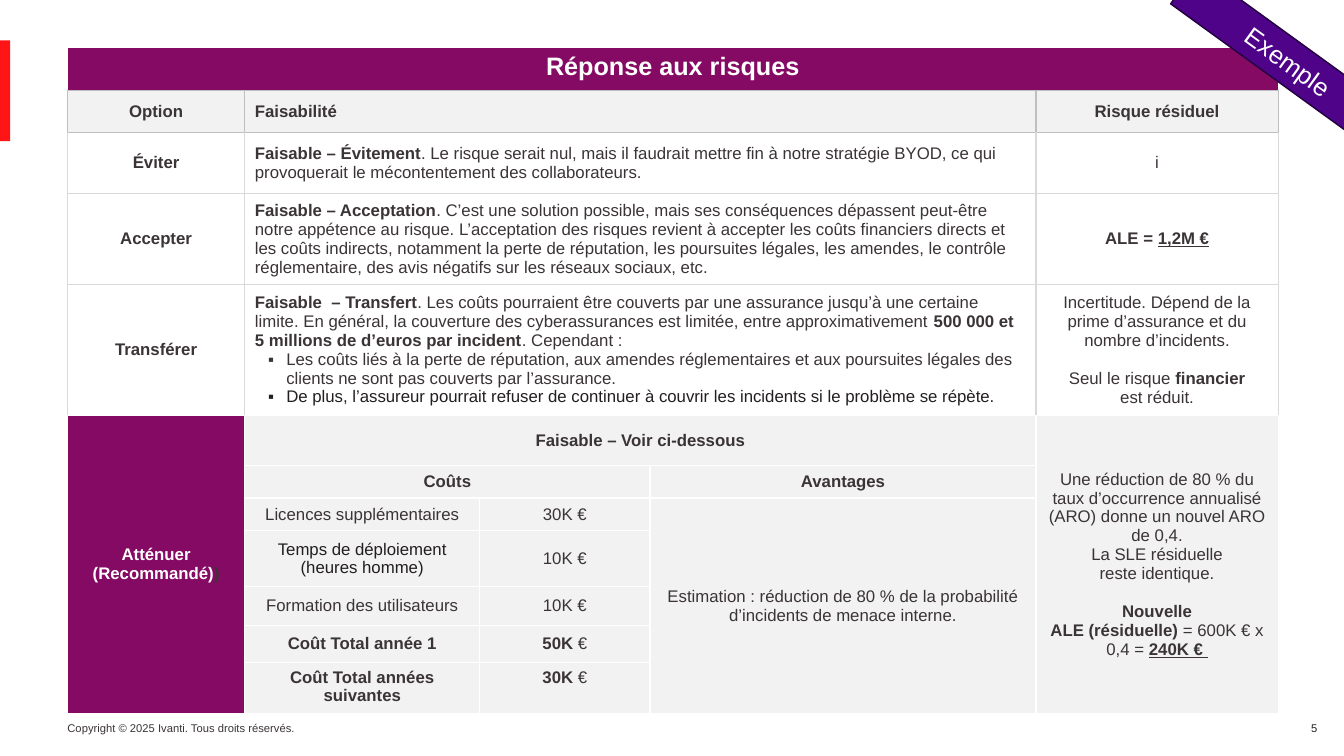
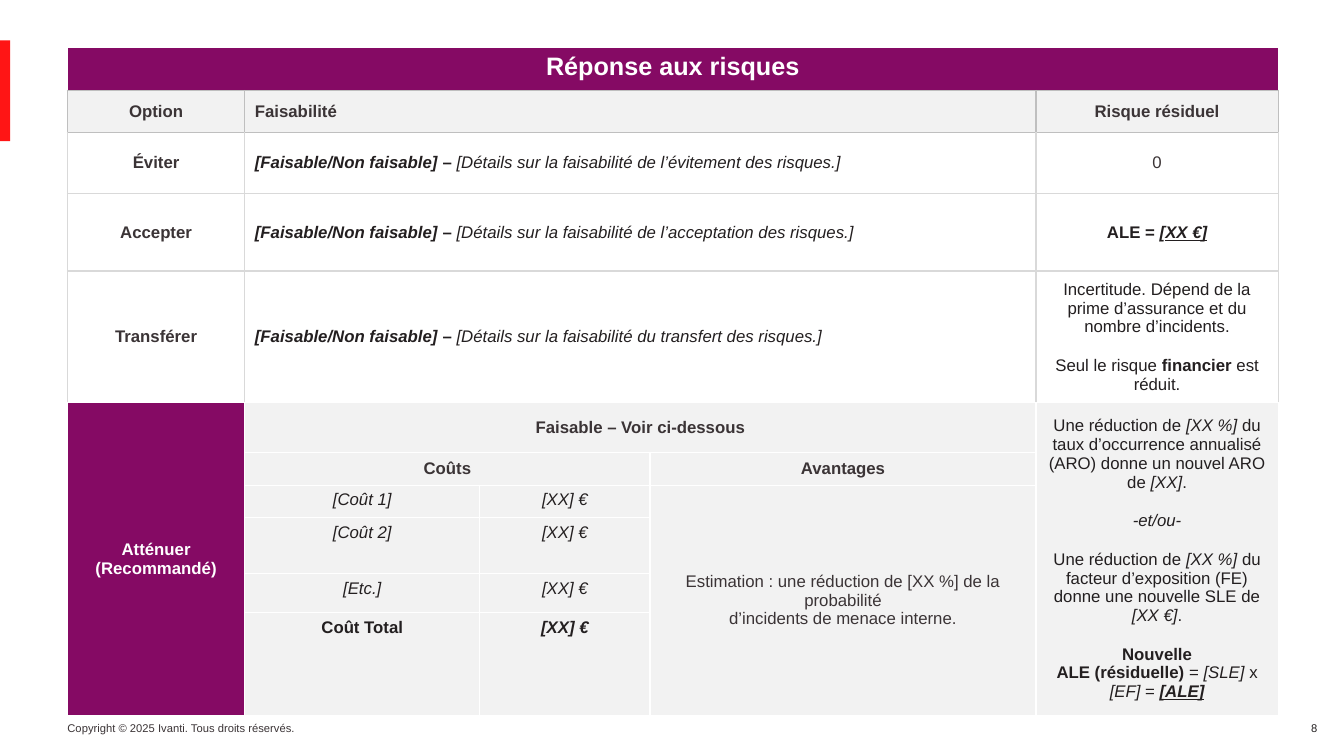
"""Build the two risk response slides: a worked example and its blank template."""
from dataclasses import dataclass

import lxml.etree
import pptx
import pptx.dml.color
import pptx.enum.shapes
import pptx.enum.text
import pptx.oxml
import pptx.oxml.ns
import pptx.util

Cm, Pt = pptx.util.Cm, pptx.util.Pt
rgb = pptx.dml.color.RGBColor.from_string
ALIGN, ANCHOR = pptx.enum.text.PP_ALIGN, pptx.enum.text.MSO_ANCHOR
RECTANGLE = pptx.enum.shapes.MSO_SHAPE.RECTANGLE
qn = pptx.oxml.ns.qn


@dataclass(frozen=True)
class Theme:
    font: str = "Arial"
    text: str = "3B3436"
    dark: str = "231F20"
    white: str = "FFFFFF"
    purple: str = "850A64"
    red: str = "FF1515"
    ribbon: str = "4E0389"
    ribbon_edge: str = "22013C"
    panel: str = "F2F2F2"
    rule: str = "BFBFBF"
    pale_rule: str = "D9D9D9"
    heading: int = 18
    body: int = 12
    footer: int = 8


theme = Theme()


@dataclass
class Para:
    runs: list
    color: str = theme.text
    gap: bool = False
    bullet: bool = False


def write(frame, paras, align, size):
    for index, para in enumerate(paras):
        line = frame.paragraphs[0] if index == 0 else frame.add_paragraph()
        line.alignment = align
        if para.gap:
            line.space_before = Pt(14)
        if para.bullet:
            props = line._p.get_or_add_pPr()
            props.set("marL", str(Cm(0.79)))
            props.set("indent", str(-Cm(0.46)))
            lxml.etree.SubElement(props, qn("a:buFont"), typeface=theme.font)
            lxml.etree.SubElement(props, qn("a:buChar"), char="▪")
        line.font.name, line.font.size = theme.font, Pt(size)
        line.font.color.rgb = rgb(para.color)
        for words, style in para.runs:
            for number, piece in enumerate(words.split("\n")):
                if number:
                    line.add_line_break()
                run = line.add_run()
                run.text = piece
                target = line.font if len(para.runs) == 1 else run.font
                target.bold = "b" in style
                target.italic = "i" in style
                target.underline = "u" in style
                if "t" in style:
                    run.font.color.rgb = rgb(theme.text)


def paint(shape, fill, edge=None):
    shape.shadow.inherit = False
    shape.fill.solid()
    shape.fill.fore_color.rgb = rgb(fill)
    if edge:
        shape.line.color.rgb = rgb(edge)
        shape.line.width = Pt(1)
    else:
        shape.line.fill.background()


shared_labels = {
    (1, 0): "Option",
    (1, 1): "Faisabilité",
    (1, 4): "Risque résiduel",
    (2, 0): "Éviter",
    (3, 0): "Accepter",
    (4, 0): "Transférer",
    (5, 1): "Faisable – Voir ci-dessous",
    (6, 1): "Coûts",
    (6, 3): "Avantages",
}
shared_cells = {place: [Para([(label, "b")])] for place, label in shared_labels.items()}
shared_cells[0, 0] = [Para([("Réponse aux risques", "b")], theme.white)]

example_cells = {
    (2, 1): [Para([
        ("Faisable – Évitement", "b"),
        (". Le risque serait nul, mais il faudrait mettre fin à notre stratégie BYOD, ce qui "
         "provoquerait le mécontentement des collaborateurs.", ""),
    ])],
    (2, 4): [Para([("i", "")])],
    (3, 1): [Para([
        ("Faisable – Acceptation", "b"),
        (". C’est une solution possible, mais ses conséquences dépassent peut-être notre appétence "
         "au risque. L’acceptation des risques revient à accepter les coûts financiers directs et "
         "les coûts indirects, notamment la perte de réputation, les poursuites légales, les "
         "amendes, le contrôle réglementaire, des avis négatifs sur les réseaux sociaux, etc.", ""),
    ])],
    (3, 4): [Para([("ALE = ", "b"), ("1,2M €", "bu")])],
    (4, 1): [
        Para([
            ("Faisable  – Transfert", "b"),
            (". Les coûts pourraient être couverts par une assurance jusqu’à une certaine limite. "
             "En général, la couverture des cyberassurances est limitée, entre "
             "approximativement ", ""),
            ("500 000 et 5 millions de d’euros par incident", "b"),
            (". Cependant :", ""),
        ]),
        Para([("Les coûts liés à la perte de réputation, aux amendes réglementaires et aux "
               "poursuites légales des clients ne sont pas couverts par l’assurance.", "")],
             bullet=True),
        Para([("De plus, l’assureur pourrait refuser de continuer à couvrir les incidents si le "
               "problème se répète.", "")], theme.dark, bullet=True),
    ],
    (4, 4): [
        Para([("Incertitude. Dépend de la prime d’assurance et du nombre d’incidents.", "")]),
        Para([("Seul le risque ", ""), ("financier", "b")], gap=True),
        Para([("est réduit.", "")]),
    ],
    (5, 0): [Para([("Atténuer (Recommandé)", "b"), (")", "bt")], theme.white)],
    (5, 4): [
        Para([("Une réduction de 80 % du taux d’occurrence annualisé (ARO) donne un nouvel ARO "
               "de 0,4.", "")]),
        Para([("La SLE résiduelle\nreste identique.", "")]),
        Para([("Nouvelle\nALE (résiduelle)", "b"), (" = 600K € x 0,4 = ", ""), ("240K € ", "bu")],
             gap=True),
    ],
    (7, 1): [Para([("Licences supplémentaires", "")])],
    (7, 2): [Para([("30K €", "")])],
    (7, 3): [Para([("Estimation : réduction de 80 % de la probabilité\n"
                    "d’incidents de menace interne.", "")])],
    (8, 1): [Para([("Temps de déploiement (heures homme)", "")], theme.dark)],
    (8, 2): [Para([("10K €", "")])],
    (9, 1): [Para([("Formation des utilisateurs", "")])],
    (9, 2): [Para([("10K €", "")])],
    (10, 1): [Para([("Coût Total année 1", "b")])],
    (10, 2): [Para([("50K ", "b"), ("€", "")])],
    (11, 1): [Para([("Coût Total années suivantes", "b")])],
    (11, 2): [Para([("30K ", "b"), ("€", "")])],
}

template_cells = {
    (2, 4): [Para([("0", "")])],
    (3, 4): [Para([("ALE = ", "b"), ("[", "bi"), ("XX €]", "biu")], theme.dark)],
    (4, 4): [
        Para([("Incertitude. Dépend de la prime d’assurance et du nombre d’incidents.", "")],
             theme.dark),
        Para([("Seul le risque ", ""), ("financier", "b"), (" est réduit.", "")],
             theme.dark, gap=True),
    ],
    (5, 0): [Para([("Atténuer (Recommandé)", "b")], theme.white)],
    (5, 4): [
        Para([("Une réduction de ", ""), ("[XX %]", "i"),
              (" du taux d’occurrence annualisé (ARO) donne un nouvel ARO de ", ""),
              ("[XX]", "i"), (".", "")], theme.dark),
        Para([("-et/ou-", "i")], theme.dark, gap=True),
        Para([("Une réduction de ", ""), ("[XX %]", "i"),
              (" du facteur d’exposition (FE) donne une nouvelle SLE de ", ""),
              ("[XX €]", "i"), (".", "")], theme.dark, gap=True),
        Para([("Nouvelle\nALE (résiduelle)", "b"), (" = ", ""), ("[SLE]", "i"), (" x ", ""),
              ("[EF]", "i"), (" = ", ""), ("[ALE]", "biu")], theme.dark, gap=True),
    ],
    (7, 3): [Para([("Estimation : une réduction de [XX %] de la probabilité\n"
                    "d’incidents de menace interne.", "")])],
    (10, 1): [Para([("Coût Total", "b")], theme.dark)],
    (10, 2): [Para([("[XX] €", "bi")], theme.dark)],
}
for row, action in enumerate(["de l’évitement", "de l’acceptation", "du transfert"], start=2):
    template_cells[row, 1] = [Para([
        ("[Faisable/Non faisable]", "bi"), (" – ", "b"),
        (f"[Détails sur la faisabilité {action} des risques.]", "i"),
    ], theme.dark)]
for row, cost in enumerate(["[Coût 1]", "[Coût 2]", "[Etc.]"], start=7):
    template_cells[row, 1] = [Para([(cost, "i")], theme.dark)]
    template_cells[row, 2] = [Para([("[XX] €", "i")], theme.dark)]

column_widths = [4.47, 5.92, 4.29, 9.73, 6.1]
heading_heights = [1.08, 1.05, 1.55]
cost_heights = [1.26, 0.82, 0.82, 1.41, 0.98]
plans = [
    ("5", example_cells, heading_heights + [2.28, 3.3] + cost_heights + [0.94, 1.28], 11, True),
    ("8", template_cells, heading_heights + [1.95, 3.32] + cost_heights + [2.58], 7, False),
]
level_rules = [theme.white, theme.rule, theme.rule, theme.pale_rule, theme.pale_rule]
upright_rules = [theme.white, theme.rule] + [theme.pale_rule] * 3

deck = pptx.Presentation()
deck.slide_width, deck.slide_height = Cm(33.87), Cm(19.05)

for page, own_cells, heights, first_top_row, is_example in plans:
    slide = deck.slides.add_slide(deck.slide_layouts[6])

    accent = slide.shapes.add_shape(RECTANGLE, 0, Cm(1.02), Cm(0.26), Cm(2.54))
    paint(accent, theme.red)

    for words, left, width, align, color in [
        ("Copyright © 2025 Ivanti. Tous droits réservés.", 1.7, 6.1, ALIGN.LEFT, theme.text),
        (page, 32.23, 1.22, ALIGN.RIGHT, theme.dark),
    ]:
        footer = slide.shapes.add_textbox(Cm(left), Cm(18.06), Cm(width), Cm(0.61)).text_frame
        footer.word_wrap = True
        footer.margin_left = 0
        write(footer, [Para([(words, "")], color)], align, theme.footer)

    responses = slide.shapes.add_table(
        len(heights), len(column_widths), Cm(1.7), Cm(1.2),
        Cm(sum(column_widths)), Cm(sum(heights))).table
    responses.first_row = responses.horz_banding = False
    for column, width in zip(responses.columns, column_widths):
        column.width = Cm(width)
    for row, height in zip(responses.rows, heights):
        row.height = Cm(height)

    last = len(heights) - 1
    merges = {(0, 0): (0, 4), (6, 1): (6, 2), (5, 0): (last, 0), (5, 4): (last, 4),
              (7, 3): (last, 3)}
    merges.update({(row, 1): (row, 3) for row in range(1, 6)})
    for start, end in merges.items():
        responses.cell(*start).merge(responses.cell(*end))

    levels = level_rules + [theme.white] * (last + 2 - len(level_rules))
    uprights = upright_rules + [theme.white] * (last + 1 - len(upright_rules))
    for (row, col), paras in {**shared_cells, **own_cells}.items():
        cell = responses.cell(row, col)
        bottom = merges.get((row, col), (row, col))[0] + 1
        for side, color in [("L", uprights[row]), ("R", uprights[row]),
                            ("T", levels[row]), ("B", levels[bottom])]:
            edge = lxml.etree.SubElement(
                cell._tc.get_or_add_tcPr(), qn(f"a:ln{side}"), w=str(Pt(1)))
            solid = lxml.etree.SubElement(edge, qn("a:solidFill"))
            lxml.etree.SubElement(solid, qn("a:srgbClr"), val=color)
        if row == 0 or (row, col) == (5, 0):
            fill = theme.purple
        else:
            fill = theme.white if 2 <= row <= 4 else theme.panel
        cell.fill.solid()
        cell.fill.fore_color.rgb = rgb(fill)
        at_top = row == 0 or (row >= first_top_row and col in (1, 2))
        cell.vertical_anchor = ANCHOR.TOP if at_top else ANCHOR.MIDDLE
        align = ALIGN.LEFT if col == 1 and row < 5 else ALIGN.CENTER
        write(cell.text_frame, paras, align, theme.body if row else theme.heading)

    if is_example:
        ribbon = slide.shapes.add_shape(RECTANGLE, Cm(29.21), Cm(0.99), Cm(6.5), Cm(1.12))
        ribbon.rotation = 35.9
        paint(ribbon, theme.ribbon, theme.ribbon_edge)
        ribbon.text_frame.vertical_anchor = ANCHOR.MIDDLE
        write(ribbon.text_frame, [Para([("Exemple", "")], theme.white)], ALIGN.CENTER,
              theme.heading)

deck.save("out.pptx")
